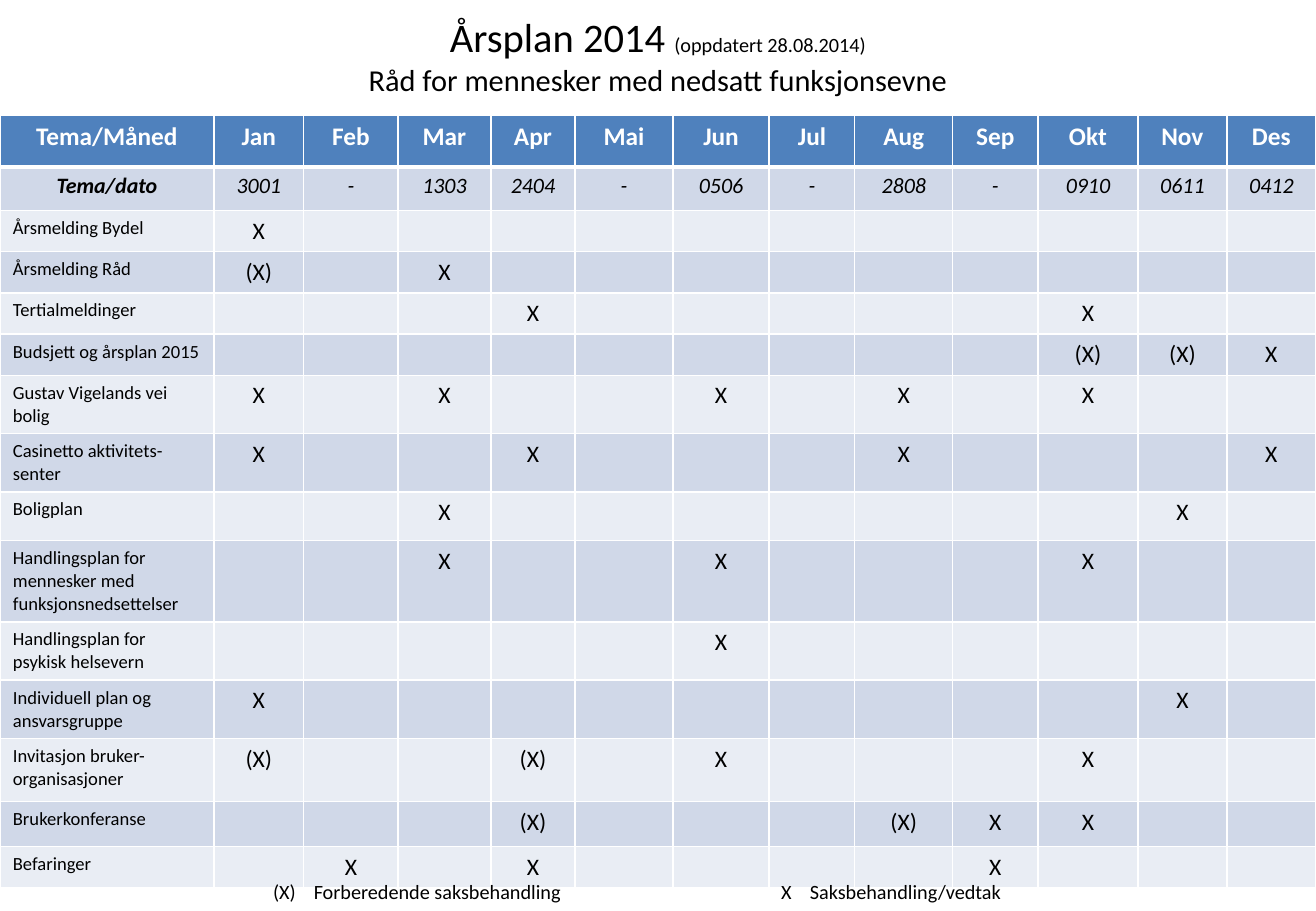
"""Build the 2014 annual plan slide with its month-by-month topic table."""
import dataclasses

import pptx
import pptx.dml.color
import pptx.enum.text
import pptx.oxml.ns
import pptx.oxml.xmlchemy
import pptx.presentation
import pptx.slide
import pptx.table
import pptx.text.text
import pptx.util
from lxml import etree

Cm = pptx.util.Cm
Pt = pptx.util.Pt
qn = pptx.oxml.ns.qn
Align = pptx.enum.text.PP_ALIGN


@dataclasses.dataclass(frozen=True)
class Theme:
    """Colours, font and type sizes of the slide."""
    font: str = "Calibri"
    black: str = "000000"
    white: str = "FFFFFF"
    header_fill: str = "4F81BD"
    dark_band: str = "D0D8E8"
    light_band: str = "E9EDF4"
    title: int = 24
    subtitle: int = 18
    small: int = 12
    header: int = 15
    date: int = 13
    topic: int = 11
    mark: int = 14
    border: int = 1
    header_border: int = 3


@dataclasses.dataclass(frozen=True)
class TextStyle:
    """Look of the text in one kind of cell or line."""
    size: int
    color: str
    bold: bool = False
    italic: bool = False
    align: Align = Align.CENTER


@dataclasses.dataclass(frozen=True)
class Topic:
    """One topic with its row height in centimetres and its marks by month."""
    name: str
    height: float
    marks: dict[str, str]


@dataclasses.dataclass(frozen=True)
class LegendEntry:
    """One explained mark with its left edge and tab stop in centimetres."""
    mark: str
    meaning: str
    left: float
    tab: float


THEME = Theme()
HEADER = TextStyle(THEME.header, THEME.white, bold=True)
DATE_LABEL = TextStyle(THEME.date, THEME.black, bold=True, italic=True)
DATE = TextStyle(THEME.date, THEME.black, italic=True)
TOPIC = TextStyle(THEME.topic, THEME.black, align=Align.LEFT)
MARK = TextStyle(THEME.mark, THEME.black)
SMALL = TextStyle(THEME.small, THEME.black)

DONE, PREPARED = "X", "(X)"
MONTHS = ["Jan", "Feb", "Mar", "Apr", "Mai", "Jun", "Jul", "Aug", "Sep", "Okt", "Nov", "Des"]
DATES = ["3001", "-", "1303", "2404", "-", "0506", "-", "2808", "-", "0910", "0611", "0412"]
COLUMN_WIDTHS = [4.47, 1.88, 1.97, 1.94, 1.76, 2.05, 2.01, 1.79, 2.05, 1.78, 2.09, 1.86, 1.86]
HEADER_HEIGHT, DATE_HEIGHT = 1.08, 0.91
TOPICS = [
    Topic("Årsmelding Bydel", 0.76, {"Jan": DONE}),
    Topic("Årsmelding Råd", 0.81, {"Jan": PREPARED, "Mar": DONE}),
    Topic("Tertialmeldinger", 0.79, {"Apr": DONE, "Okt": DONE}),
    Topic("Budsjett og årsplan 2015", 0.86, {"Okt": PREPARED, "Nov": PREPARED, "Des": DONE}),
    Topic("Gustav Vigelands vei bolig", 0.94, dict.fromkeys(["Jan", "Mar", "Jun", "Aug", "Okt"], DONE)),
    Topic("Casinetto aktivitets-senter", 1.02, dict.fromkeys(["Jan", "Apr", "Aug", "Des"], DONE)),
    Topic("Boligplan", 1.02, {"Mar": DONE, "Nov": DONE}),
    Topic("Handlingsplan for mennesker med funksjonsnedsettelser", 1.14,
          dict.fromkeys(["Mar", "Jun", "Okt"], DONE)),
    Topic("Handlingsplan for psykisk helsevern", 1.14, {"Jun": DONE}),
    Topic("Individuell plan og ansvarsgruppe", 1.14, {"Jan": DONE, "Nov": DONE}),
    Topic("Invitasjon bruker-organisasjoner", 1.32,
          {"Jan": PREPARED, "Apr": PREPARED, "Jun": DONE, "Okt": DONE}),
    Topic("Brukerkonferanse", 0.94, {"Apr": PREPARED, "Aug": PREPARED, "Sep": DONE, "Okt": DONE}),
    Topic("Befaringer", 0.81, dict.fromkeys(["Feb", "Apr", "Sep"], DONE)),
]
LEGEND = [
    LegendEntry(PREPARED, "Forberedende saksbehandling", 5.46, 0.85),
    LegendEntry(DONE, "Saksbehandling/vedtak", 16.08, 0.6),
]


def add_run(paragraph: pptx.text.text._Paragraph, text: str, style: TextStyle) -> None:
    """Add one run in the given style."""
    run = paragraph.add_run()
    run.text = text
    run.font.name = THEME.font
    run.font.size = Pt(style.size)
    run.font.bold = style.bold
    run.font.italic = style.italic
    run.font.color.rgb = pptx.dml.color.RGBColor.from_string(style.color)


def add_title(slide: pptx.slide.Slide) -> None:
    """Place the title and fill in its two lines."""
    title = slide.shapes.title
    title.left, title.top, title.width, title.height = Cm(1.37), Cm(0.13), Cm(24.77), Cm(2.03)
    frame = title.text_frame
    frame.auto_size = pptx.enum.text.MSO_AUTO_SIZE.NONE
    frame.vertical_anchor = pptx.enum.text.MSO_ANCHOR.MIDDLE
    heading = frame.paragraphs[0]
    heading.alignment = Align.CENTER
    add_run(heading, "Årsplan 2014 ", TextStyle(THEME.title, THEME.black))
    add_run(heading, "(oppdatert 28.08.2014)", SMALL)
    heading.add_line_break()
    add_run(heading, "Råd for mennesker med nedsatt funksjonsevne", TextStyle(THEME.subtitle, THEME.black))


def set_borders(cell: pptx.table._Cell, top: int, bottom: int) -> None:
    """Draw white lines on all four sides of a cell."""
    properties = cell._tc.get_or_add_tcPr()
    sides = {"a:lnL": THEME.border, "a:lnR": THEME.border, "a:lnT": top, "a:lnB": bottom}
    for side, width in sides.items():
        line = etree.SubElement(properties, qn(side), w=str(Pt(width)))
        fill = etree.SubElement(line, qn("a:solidFill"))
        etree.SubElement(fill, qn("a:srgbClr"), val=THEME.white)


def fill_cell(cell: pptx.table._Cell, text: str, style: TextStyle, fill: str) -> None:
    """Set the margins, fill and text of a cell."""
    cell.margin_left = cell.margin_right = Cm(0.27)
    cell.margin_top = cell.margin_bottom = Cm(0.13)
    cell.fill.solid()
    cell.fill.fore_color.rgb = pptx.dml.color.RGBColor.from_string(fill)
    paragraph = cell.text_frame.paragraphs[0]
    paragraph.alignment = style.align
    if text:
        add_run(paragraph, text, style)
    else:
        etree.SubElement(paragraph._p, qn("a:endParaRPr"), sz=str(style.size * 100))


def add_plan(slide: pptx.slide.Slide) -> None:
    """Add the table of topics by month."""
    rows = [(["Tema/Måned", *MONTHS], HEADER, HEADER, HEADER_HEIGHT),
            (["Tema/dato", *DATES], DATE_LABEL, DATE, DATE_HEIGHT)]
    rows += [([topic.name, *(topic.marks.get(month, "") for month in MONTHS)], TOPIC, MARK, topic.height)
             for topic in TOPICS]
    height = sum(row[-1] for row in rows)
    plan = slide.shapes.add_table(len(rows), len(COLUMN_WIDTHS), Cm(0), Cm(2.41),
                                  Cm(sum(COLUMN_WIDTHS)), Cm(height)).table
    for column, width in zip(plan.columns, COLUMN_WIDTHS):
        column.width = Cm(width)
    for row_index, (texts, label_style, month_style, row_height) in enumerate(rows):
        plan.rows[row_index].height = Cm(row_height)
        band = THEME.dark_band if row_index % 2 else THEME.light_band
        fill = band if row_index else THEME.header_fill
        top = THEME.header_border if row_index == 1 else THEME.border
        bottom = THEME.header_border if row_index == 0 else THEME.border
        for column_index, text in enumerate(texts):
            cell = plan.cell(row_index, column_index)
            set_borders(cell, top, bottom)
            fill_cell(cell, text, month_style if column_index else label_style, fill)


def add_legend_entry(slide: pptx.slide.Slide, entry: LegendEntry) -> None:
    """Add the explanation of one mark below the table."""
    frame = slide.shapes.add_textbox(Cm(entry.left), Cm(18.26), Cm(7.75), Cm(0.76)).text_frame
    frame.word_wrap = True
    explanation = frame.paragraphs[0]
    tabs = etree.SubElement(explanation._p.get_or_add_pPr(), qn("a:tabLst"))
    etree.SubElement(tabs, qn("a:tab"), pos=str(Cm(entry.tab)), algn="l")
    add_run(explanation, f"{entry.mark}\t{entry.meaning}", SMALL)


def main() -> None:
    """Build and save the presentation."""
    presentation = pptx.Presentation()
    presentation.slide_width, presentation.slide_height = Cm(27.51), Cm(19.05)
    slide = presentation.slides.add_slide(presentation.slide_layouts[5])
    add_title(slide)
    add_plan(slide)
    for entry in LEGEND:
        add_legend_entry(slide, entry)
    presentation.save("out.pptx")


if __name__ == "__main__":
    main()
